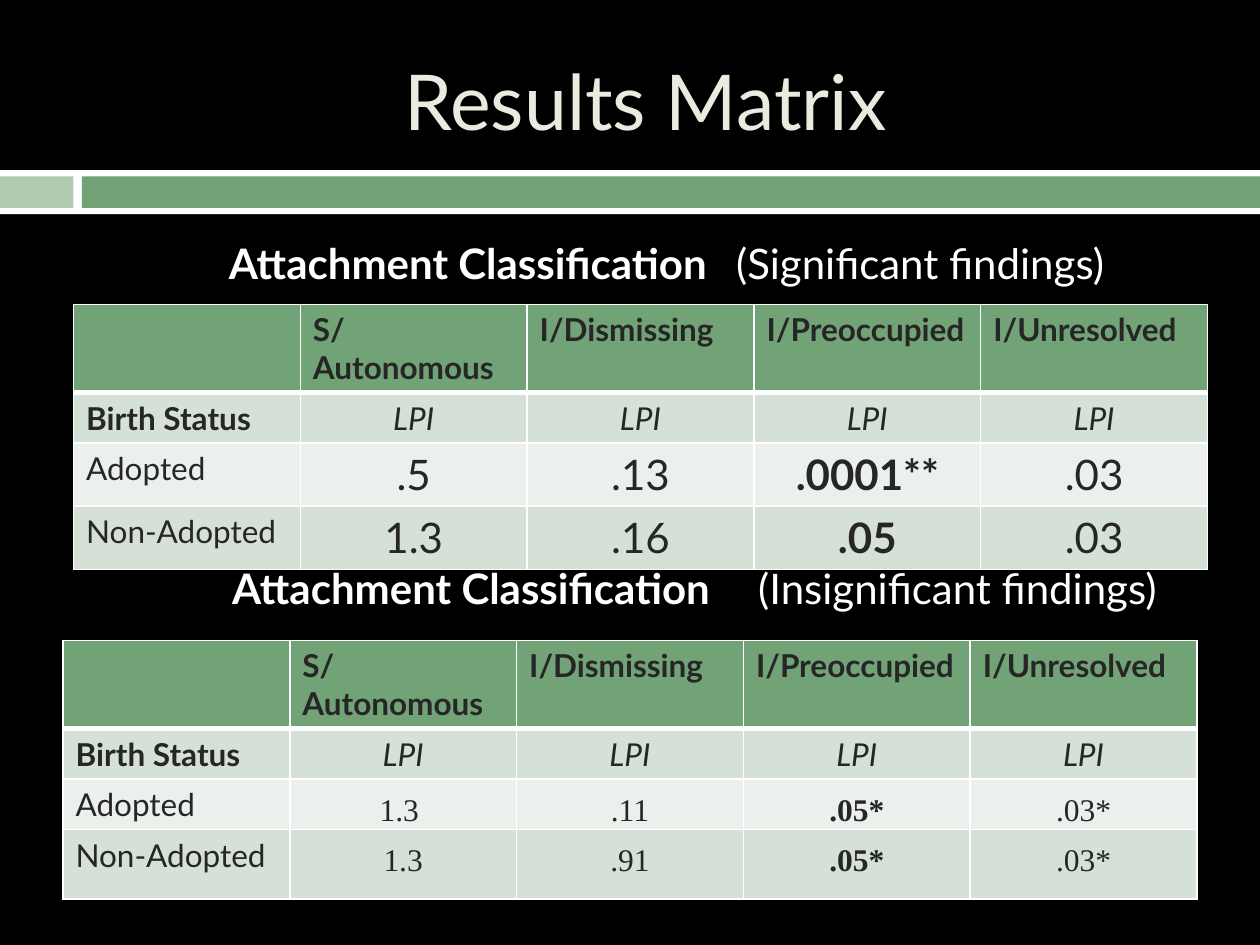
from lxml.etree import SubElement
from pptx import Presentation
from pptx.dml.color import RGBColor
from pptx.enum.shapes import MSO_SHAPE
from pptx.enum.text import MSO_ANCHOR, MSO_AUTO_SIZE, PP_ALIGN
from pptx.oxml.ns import qn
from pptx.util import Inches, Pt

# Theme
theme = {
    "back": "000000", "white": "FFFFFF", "title": "EAEBDE", "ink": "262626",
    "green": "72A376", "pale": "B0CCB0", "band": "D5E0D6", "light": "EBF0EC",
    "sans": "Lato", "serif": "Times New Roman",
    "head": 44, "sub": 24, "body": 18,
}

# Grid: 120 columns by 90 rows
deck = Presentation()
deck.slide_width, deck.slide_height = Inches(10), Inches(7.5)
unit = deck.slide_width / 120


def grid(*cells):
    return [round(cell * unit) for cell in cells]


def write(para, text, size, color, bold=False, slant=False, face="sans"):
    run = para.add_run()
    run.text = text
    font = run.font
    font.name, font.size = theme[face], Pt(theme[size])
    font.bold, font.italic = bold, slant
    font.color.rgb = RGBColor.from_string(theme[color])


slide = deck.slides.add_slide(deck.slide_layouts[5])
slide.background.fill.solid()
slide.background.fill.fore_color.rgb = RGBColor.from_string(theme["back"])

# Divider bars
for color, *box in [("white", 0, 16.2, 120, 4.2),
                    ("pale", 0, 16.8, 7, 3),
                    ("green", 7.8, 16.8, 112.2, 3)]:
    bar = slide.shapes.add_shape(MSO_SHAPE.RECTANGLE, *grid(*box))
    bar.shadow.inherit = False
    bar.fill.solid()
    bar.fill.fore_color.rgb = RGBColor.from_string(theme[color])
    bar.line.fill.background()

# Title
title = slide.shapes.title
title.left, title.top, title.width, title.height = grid(8, 3, 107, 13)
title.text_frame.vertical_anchor = MSO_ANCHOR.MIDDLE
para = title.text_frame.paragraphs[0]
para.alignment = PP_ALIGN.CENTER
write(para, "Results Matrix", "head", "title")

# Tables: place, row heights, face and size of values, values
top = [["", "S/Autonomous", "I/Dismissing", "I/Preoccupied", "I/Unresolved"],
       ["Birth Status"] + ["LPI"] * 4]
tables = [
    ((7, 29, 108, 21.6), (4.8, 4.8, 6, 6), "sans", "sub",
     [["Adopted", ".5", ".13", ".0001**", ".03"],
      ["Non-Adopted", "1.3", ".16", ".05", ".03"]]),
    ((6, 61, 108, 21), (3, 3, 3, 6.6), "serif", "body",
     [["Adopted", "1.3 ", ".11", ".05*", ".03*"],
      ["Non-Adopted", "1.3", ".91", ".05*", ".03*"]]),
]
fills = ["green", "band", "light", "band"]

for box, tall, face, size, data in tables:
    table = slide.shapes.add_table(4, 5, *grid(*box)).table
    for col in table.columns:
        col.width = grid(box[2] / 5)[0]
    for r, row in enumerate(top + data):
        table.rows[r].height = grid(tall[r])[0]
        for c, text in enumerate(row):
            cell = table.cell(r, c)
            # Cell borders, thick below the header
            props = cell._tc.get_or_add_tcPr()
            for side in "LRTB":
                thick = (r, side) in [(0, "B"), (1, "T")]
                line = SubElement(props, qn("a:ln" + side), w=str(Pt(3 if thick else 1)))
                paint = SubElement(line, qn("a:solidFill"))
                SubElement(paint, qn("a:srgbClr"), val=theme["white"])
            cell.fill.solid()
            cell.fill.fore_color.rgb = RGBColor.from_string(theme[fills[r]])
            # Cell text
            value = r > 1 and c > 0
            para = cell.text_frame.paragraphs[0]
            if r and c:
                para.alignment = PP_ALIGN.CENTER
            if value and face == "serif":
                cell.margin_left = cell.margin_right = Inches(0.07)
                cell.margin_top = cell.margin_bottom = 0
                para.line_spacing = Pt(28)
            bold = r == 0 or (r == 1 and c == 0) or (value and c == 3)
            write(para, text, size if value else "body", "ink", bold,
                  slant=r == 1 and c > 0, face=face if value else "sans")

# Captions: place, left inset, tab stop, note
for box, inset, stop, note in [
        ((10, 22, 107, 6.1), 11.8, 48.3, "(Significant findings)"),
        ((9, 53, 104, 6.1), 13.1, 50.1, "(Insignificant findings)")]:
    label = slide.shapes.add_textbox(*grid(*box))
    frame = label.text_frame
    frame.word_wrap = True
    frame.auto_size = MSO_AUTO_SIZE.SHAPE_TO_FIT_TEXT
    frame.margin_left = grid(inset)[0]
    para = frame.paragraphs[0]
    tabs = SubElement(para._p.get_or_add_pPr(), qn("a:tabLst"))
    SubElement(tabs, qn("a:tab"), pos=str(grid(stop)[0]), algn="l")
    write(para, "Attachment Classification\t", "sub", "white", bold=True)
    write(para, note, "sub", "white")

deck.save("out.pptx")
